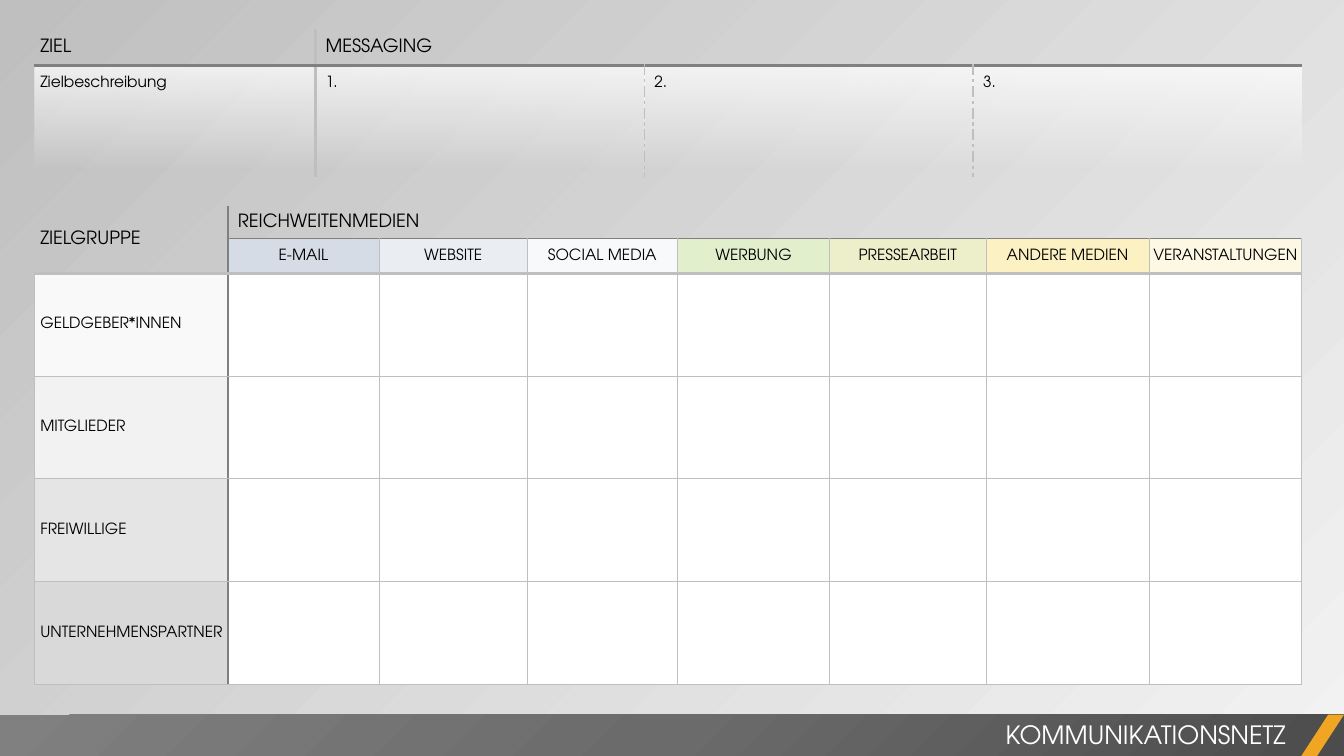
from pptx import Presentation
from pptx import util as u
from pptx.dml.color import RGBColor
from pptx.enum import shapes, text
from pptx.oxml import parse_xml
from pptx.oxml.ns import nsdecls, qn

W, H = 13.33, 7.5
FONT = "TeX Gyre Adventor"
BLACK = RGBColor(0x00, 0x00, 0x00)
WHITE = RGBColor(0xFF, 0xFF, 0xFF)
LIGHT = RGBColor(0xBF, 0xBF, 0xBF)
DARK = RGBColor(0x80, 0x80, 0x80)
PALE = RGBColor(0xF2, 0xF2, 0xF2)
CHARCOAL = RGBColor(0x4C, 0x4C, 0x4C)
SLATE = RGBColor(0x6B, 0x6B, 0x6B)
ORANGE = RGBColor(0xF0, 0xA6, 0x22)
PLAIN_STYLE = "{2D5ABB26-0587-4C30-8999-92F81FD0307C}"

MEDIA = [
    ("E-MAIL", RGBColor(0xD6, 0xDC, 0xE5)),
    ("WEBSITE", RGBColor(0xEA, 0xEE, 0xF3)),
    ("SOCIAL MEDIA", RGBColor(0xF7, 0xF9, 0xFB)),
    ("WERBUNG", RGBColor(0xE2, 0xEF, 0xCD)),
    ("PRESSEARBEIT", RGBColor(0xED, 0xEF, 0xCB)),
    ("ANDERE MEDIEN", RGBColor(0xFC, 0xF1, 0xC3)),
    ("VERANSTALTUNGEN", RGBColor(0xFC, 0xF8, 0xE4)),
]
GROUPS = [
    ("GELDGEBER*INNEN", RGBColor(0xF9, 0xF9, 0xF9)),
    ("MITGLIEDER", PALE),
    ("FREIWILLIGE", RGBColor(0xE5, 0xE5, 0xE5)),
    ("UNTERNEHMENSPARTNER", RGBColor(0xD9, 0xD9, 0xD9)),
]
LINEAR = '<a:lin {} ang="{}" scaled="0"/>'
CORNER = ('<a:path {} path="circle"><a:fillToRect l="100000" t="100000"/>'
          '</a:path>')


def set_gradient(fill, element, stops, direction):
    fill.gradient()
    grad = element.find(".//" + qn("a:gradFill"))
    for child in list(grad):
        grad.remove(child)
    gs = "".join(
        f'<a:gs pos="{pos * 1000}"><a:srgbClr val="{color}">'
        f'<a:alpha val="{alpha * 1000}"/></a:srgbClr></a:gs>'
        for pos, color, alpha in stops)
    grad.append(parse_xml(f'<a:gsLst {nsdecls("a")}>{gs}</a:gsLst>'))
    grad.append(parse_xml(direction))


def linear(degrees):
    return LINEAR.format(nsdecls("a"), degrees * 60000)


def set_solid(fill, color):
    fill.solid()
    fill.fore_color.rgb = color


def add_run(p, words, size, color=BLACK):
    r = p.add_run()
    r.text = words
    r.font.name = FONT
    r.font.size = u.Pt(size)
    r.font.color.rgb = color


def write_cell(cell, words, size, left=0, top=0, align=text.PP_ALIGN.LEFT,
               anchor=text.MSO_ANCHOR.MIDDLE):
    cell.margin_left, cell.margin_top = u.Inches(left), u.Inches(top)
    cell.vertical_anchor = anchor
    p = cell.text_frame.paragraphs[0]
    p.alignment = align
    add_run(p, words, size)


def add_border(tc_pr, side, edge):
    if edge:
        color, width, dash = edge
        body = (f'<a:solidFill><a:srgbClr val="{color}"/></a:solidFill>'
                f'<a:prstDash val="{dash}"/>')
    else:
        width, body = 0, "<a:noFill/>"
    tc_pr.append(parse_xml(
        f'<a:ln{side} {nsdecls("a")} w="{u.Pt(width)}">{body}</a:ln{side}>'))


def add_grid(s, box, cols, rows, vertical, horizontal):
    frame = s.shapes.add_table(len(rows), len(cols),
                               *(u.Inches(v) for v in box))
    table = frame.table
    table.first_row = table.horz_banding = False
    frame._element.find(".//" + qn("a:tableStyleId")).text = PLAIN_STYLE
    for col, share in zip(table.columns, cols):
        col.width = u.Inches(box[2] * share / sum(cols))
    for row, share in zip(table.rows, rows):
        row.height = u.Inches(box[3] * share / sum(rows))
    for i in range(len(rows)):
        for j in range(len(cols)):
            cell = table.cell(i, j)
            cell.margin_left = cell.margin_right = 0
            cell.margin_top = cell.margin_bottom = 0
            tc_pr = cell._tc.get_or_add_tcPr()
            add_border(tc_pr, "L", vertical(i, j))
            add_border(tc_pr, "R", vertical(i, j + 1))
            add_border(tc_pr, "T", horizontal(i, j))
            add_border(tc_pr, "B", horizontal(i + 1, j))
            cell.fill.background()
    return table


def goal_vertical(row, edge):
    if edge == 1:
        return LIGHT, 2.25, "solid"
    if row == 1 and edge in (2, 3):
        return LIGHT, 1, "sysDashDot"
    return None


def goal_horizontal(edge, col):
    return (DARK, 2.25, "solid") if edge == 1 else None


def add_goal_table(s, box):
    table = add_grid(s, box, [2.79, 3.26, 3.26, 3.26], [0.36, 1.11],
                     goal_vertical, goal_horizontal)
    table.cell(0, 1).merge(table.cell(0, 3))
    write_cell(table.cell(0, 0), "ZIEL", 13, 0.06)
    write_cell(table.cell(0, 1), "MESSAGING", 13, 0.1)
    for j, words in enumerate(["Zielbeschreibung", "1.", "2.", "3."]):
        cell = table.cell(1, j)
        write_cell(cell, words, 11, 0.1 if j else 0.06, 0.1,
                   anchor=text.MSO_ANCHOR.TOP)
        set_gradient(cell.fill, cell._tc,
                     [(0, WHITE, 75), (93, WHITE, 0)], linear(90))


def media_vertical(row, edge):
    if edge == 1:
        return DARK, 1.5, "solid"
    if row >= 2 or (row == 1 and edge > 1):
        return LIGHT, 0.5, "solid"
    return None


def media_horizontal(edge, col):
    if edge == 0 or (edge == 1 and col == 0):
        return None
    if edge == 1:
        return DARK, 1, "solid"
    return LIGHT, 2.25 if edge == 2 else 0.5, "solid"


def add_media_table(s, box):
    table = add_grid(s, box, [1.92, 1.5, 1.47, 1.49, 1.51, 1.55, 1.62, 1.51],
                     [0.33, 0.34] + [1.02] * len(GROUPS),
                     media_vertical, media_horizontal)
    table.cell(0, 0).merge(table.cell(1, 0))
    table.cell(0, 1).merge(table.cell(0, len(MEDIA)))
    write_cell(table.cell(0, 0), "ZIELGRUPPE", 13, 0.06)
    write_cell(table.cell(0, 1), "REICHWEITENMEDIEN", 13, 0.1)
    for j, (medium, color) in enumerate(MEDIA, 1):
        write_cell(table.cell(1, j), medium, 11, align=text.PP_ALIGN.CENTER)
        set_solid(table.cell(1, j).fill, color)
    for i, (group, color) in enumerate(GROUPS, 2):
        write_cell(table.cell(i, 0), group, 11, 0.06)
        set_solid(table.cell(i, 0).fill, color)
        for j in range(1, len(MEDIA) + 1):
            set_solid(table.cell(i, j).fill, WHITE)


def add_footer(s, box):
    x, y, w, h = box
    bar = s.shapes.add_shape(shapes.MSO_SHAPE.RECTANGLE,
                             *(u.Inches(v) for v in box))
    set_gradient(bar.fill, bar._element,
                 [(0, CHARCOAL, 100), (50, SLATE, 100), (100, DARK, 100)],
                 CORNER.format(nsdecls("a")))
    slash = s.shapes.add_shape(
        shapes.MSO_SHAPE.PARALLELOGRAM, u.Inches(x + w - 0.43), u.Inches(y),
        u.Inches(0.43), u.Inches(h))
    slash.adjustments[0] = 0.65
    set_solid(slash.fill, ORANGE)
    for sp in (bar, slash):
        sp.shadow.inherit = False
        sp.line.fill.background()

    title = s.shapes.title
    title.left, title.top = u.Inches(x + w - 8.08), u.Inches(y)
    title.width, title.height = u.Inches(7.6), u.Inches(0.4)
    s.shapes._spTree.append(title._element)
    tf = title.text_frame
    tf.word_wrap = True
    tf.auto_size = text.MSO_AUTO_SIZE.NONE
    tf.vertical_anchor = text.MSO_ANCHOR.MIDDLE
    p = tf.paragraphs[0]
    p.alignment = text.PP_ALIGN.RIGHT
    add_run(p, "KOMMUNIKATIONSNETZ", 18, WHITE)


def main():
    prs = Presentation()
    prs.slide_width, prs.slide_height = u.Inches(W), u.Inches(H)
    s = prs.slides.add_slide(prs.slide_layouts[5])
    set_gradient(s.background.fill, s._element,
                 [(0, PALE, 40), (100, LIGHT, 100)], linear(225))
    left, width = 0.34, 12.57
    add_media_table(s, (left, 2.04, width, 4.75))
    add_footer(s, (0, 7.09, W, 0.42))
    add_goal_table(s, (left, 0.29, width, 1.47))
    prs.save("out.pptx")


if __name__ == "__main__":
    main()
